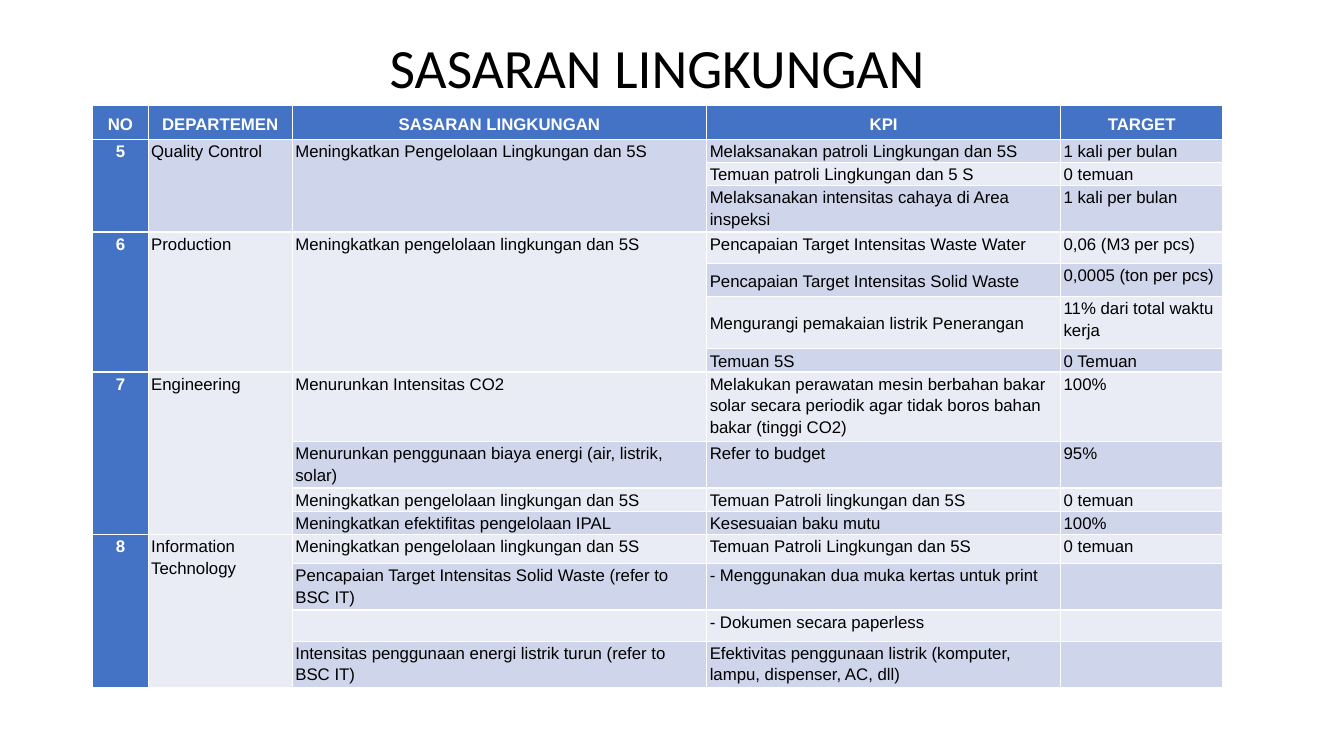
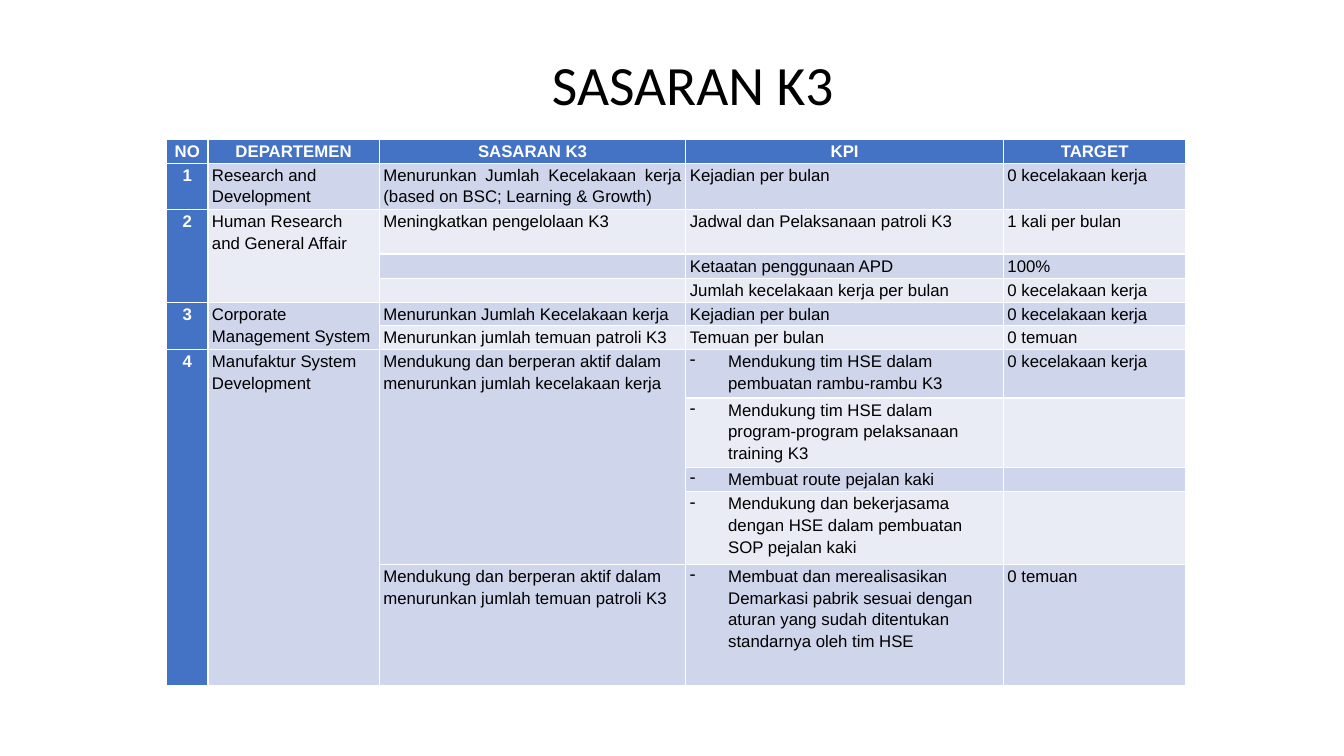
"""Build two slides of departmental environment and safety targets as tables."""
from lxml import etree
from pptx import Presentation
from pptx.dml.color import RGBColor
from pptx.enum.text import MSO_ANCHOR, PP_ALIGN
from pptx.oxml.ns import qn
from pptx.util import Inches, Pt

LEFT, CENTER, JUSTIFY = PP_ALIGN.LEFT, PP_ALIGN.CENTER, PP_ALIGN.JUSTIFY
TOP, MIDDLE = MSO_ANCHOR.TOP, MSO_ANCHOR.MIDDLE
COLORS = {"head": "4472C4", "odd": "CFD5EA", "even": "E9EBF5", "light": "FFFFFF", "dark": "000000"}
HANGING = Inches(0.38)

SLIDES = [
    {
        "title": "SASARAN LINGKUNGAN",
        "title_percent": (16.7, 5.3, 64.4, 8.1),
        "table_percent": (6.9, 14),
        "columns": [0.55, 1.43, 4.11, 3.51, 1.61],
        "rows": [0.33, 0.22, 0.22, 0.43, 0.31, 0.33, 0.52, 0.22,
                 0.67, 0.43, 0.22, 0.22, 0.29, 0.45, 0.31, 0.43],
        "inset": 0.03,
        "head_spacing": 1.5,
        "middle": {(5, 3), (6, 3), (7, 3), (7, 4)},
        "justified": set(),
        "dashed": set(),
        "cells": [
            ["NO", "DEPARTEMEN", "SASARAN LINGKUNGAN", "KPI", "TARGET"],
            ["5", "Quality Control", "Meningkatkan Pengelolaan Lingkungan dan 5S",
             "Melaksanakan patroli Lingkungan dan 5S", "1 kali per bulan"],
            [None, None, None, "Temuan patroli Lingkungan dan 5 S", "0 temuan"],
            [None, None, None, "Melaksanakan intensitas cahaya di Area inspeksi", "1 kali per bulan"],
            ["6", "Production", "Meningkatkan pengelolaan lingkungan dan 5S",
             "Pencapaian Target Intensitas Waste Water", "0,06 (M3 per pcs)"],
            [None, None, None, "Pencapaian Target Intensitas Solid Waste", "0,0005 (ton per pcs)"],
            [None, None, None, "Mengurangi pemakaian listrik Penerangan", "11% dari total waktu kerja"],
            [None, None, None, "Temuan 5S", "0 Temuan"],
            ["7", "Engineering", "Menurunkan Intensitas CO2",
             "Melakukan perawatan mesin berbahan bakar solar secara periodik "
             "agar tidak boros bahan bakar (tinggi CO2)", "100%"],
            [None, None, "Menurunkan penggunaan biaya energi (air, listrik, solar)",
             "Refer to budget", "95%"],
            [None, None, "Meningkatkan pengelolaan lingkungan dan 5S",
             "Temuan Patroli lingkungan dan 5S", "0 temuan"],
            [None, None, "Meningkatkan efektifitas pengelolaan IPAL", "Kesesuaian baku mutu", "100%"],
            ["8", "Information Technology", "Meningkatkan pengelolaan lingkungan dan 5S",
             "Temuan Patroli Lingkungan dan 5S", "0 temuan"],
            [None, None, "Pencapaian Target Intensitas Solid Waste (refer to BSC IT)",
             "- Menggunakan dua muka kertas untuk print", ""],
            [None, None, "", "- Dokumen secara paperless", ""],
            [None, None, "Intensitas penggunaan energi listrik turun (refer to BSC IT)",
             "Efektivitas penggunaan listrik (komputer, lampu, dispenser, AC, dll)", ""],
        ],
    },
    {
        "title": "SASARAN K3",
        "title_percent": (28.05, 7.3, 47, 8.5),
        "table_percent": (12.4, 18.4),
        "columns": [0.41, 1.7, 3.04, 3.15, 1.81],
        "rows": [0.24, 0.44, 0.44, 0.24, 0.24, 0.22, 0.24, 0.48, 0.67, 0.24, 0.72, 1.2],
        "inset": 0.04,
        "head_spacing": 1.15,
        "middle": set(),
        "justified": {(1, 2), (1, 3), (1, 4)},
        "dashed": {(row, 3) for row in range(7, 12)},
        "cells": [
            ["NO", "DEPARTEMEN", "SASARAN K3", "KPI", "TARGET"],
            ["1", "Research and Development",
             "Menurunkan Jumlah Kecelakaan kerja (based on BSC; Learning & Growth)",
             "Kejadian per bulan", "0 kecelakaan kerja"],
            ["2", "Human Research and General Affair", "Meningkatkan pengelolaan K3",
             "Jadwal dan Pelaksanaan patroli K3", "1 kali per bulan"],
            [None, None, "", "Ketaatan penggunaan APD", "100%"],
            [None, None, "", "Jumlah kecelakaan kerja per bulan", "0 kecelakaan kerja"],
            ["3", "Corporate Management System", "Menurunkan Jumlah Kecelakaan kerja",
             "Kejadian per bulan", "0 kecelakaan kerja"],
            [None, None, "Menurunkan jumlah temuan patroli K3", "Temuan per bulan", "0 temuan"],
            ["4", "Manufaktur System Development",
             "Mendukung dan berperan aktif dalam menurunkan jumlah kecelakaan kerja",
             "Mendukung tim HSE dalam pembuatan rambu-rambu K3", "0 kecelakaan kerja"],
            [None, None, None, "Mendukung tim HSE dalam program-program pelaksanaan training K3", ""],
            [None, None, None, "Membuat route pejalan kaki", ""],
            [None, None, None, "Mendukung dan bekerjasama dengan HSE dalam pembuatan SOP pejalan kaki", ""],
            [None, None, "Mendukung dan berperan aktif dalam menurunkan jumlah temuan patroli K3",
             "Membuat dan merealisasikan Demarkasi pabrik sesuai dengan aturan "
             "yang sudah ditentukan standarnya oleh tim HSE", "0 temuan"],
        ],
    },
]


def style_para(para, name, size, color, align, spacing, bold=False):
    """Set the font, alignment and line spacing of one paragraph."""
    para.alignment = align
    para.line_spacing = spacing
    para.font.name = name
    para.font.size = Pt(size)
    para.font.bold = bold
    para.font.color.rgb = RGBColor.from_string(COLORS[color])


deck = Presentation()
deck.slide_width, deck.slide_height = Inches(13.33), Inches(7.5)
x_percent, y_percent = deck.slide_width / 100, deck.slide_height / 100

for content in SLIDES:
    page = deck.slides.add_slide(deck.slide_layouts[6])
    left, top, width, height = content["title_percent"]
    box = page.shapes.add_textbox(int(left * x_percent), int(top * y_percent),
                                  int(width * x_percent), int(height * y_percent))
    box.text_frame.word_wrap = True
    box.text_frame.vertical_anchor = MIDDLE
    title = box.text_frame.paragraphs[0]
    title.text = content["title"]
    style_para(title, "Calibri", 39.6, "dark", CENTER, 0.9)

    left, top = content["table_percent"]
    columns, rows = content["columns"], content["rows"]
    table = page.shapes.add_table(len(rows), len(columns), int(left * x_percent), int(top * y_percent),
                                  Inches(sum(columns)), Inches(sum(rows))).table
    for column, width in zip(table.columns, columns):
        column.width = Inches(width)
    for row, height in zip(table.rows, rows):
        row.height = Inches(height)

    for r, texts in enumerate(content["cells"]):
        for c, text in enumerate(texts):
            cell = table.cell(r, c)
            strong = r == 0 or c == 0
            cell.margin_left = cell.margin_right = Inches(content["inset"])
            cell.margin_top = cell.margin_bottom = 0
            cell.vertical_anchor = MIDDLE if (r, c) in content["middle"] else TOP
            cell.fill.solid()
            band = "head" if strong else "odd" if r % 2 else "even"
            cell.fill.fore_color.rgb = RGBColor.from_string(COLORS[band])
            para = cell.text_frame.paragraphs[0]
            if text:
                para.text = text
            else:
                etree.SubElement(para._p, qn("a:endParaRPr"), sz="1200")
            if (r, c) in content["dashed"]:
                properties = para._p.get_or_add_pPr()
                properties.set("marL", str(HANGING))
                properties.set("indent", str(-HANGING))
                etree.SubElement(properties, qn("a:buChar"), char="-")
            align = CENTER if strong else JUSTIFY if (r, c) in content["justified"] else LEFT
            spacing = content["head_spacing"] if r == 0 else 1.15
            style_para(para, "Arial", 12, "light" if strong else "dark", align, spacing, strong)

    for c in range(len(columns)):
        starts = [r for r, texts in enumerate(content["cells"]) if texts[c] is not None]
        for start, stop in zip(starts, starts[1:] + [len(rows)]):
            if stop - start > 1:
                table.cell(start, c).merge(table.cell(stop - 1, c))

deck.save("out.pptx")
